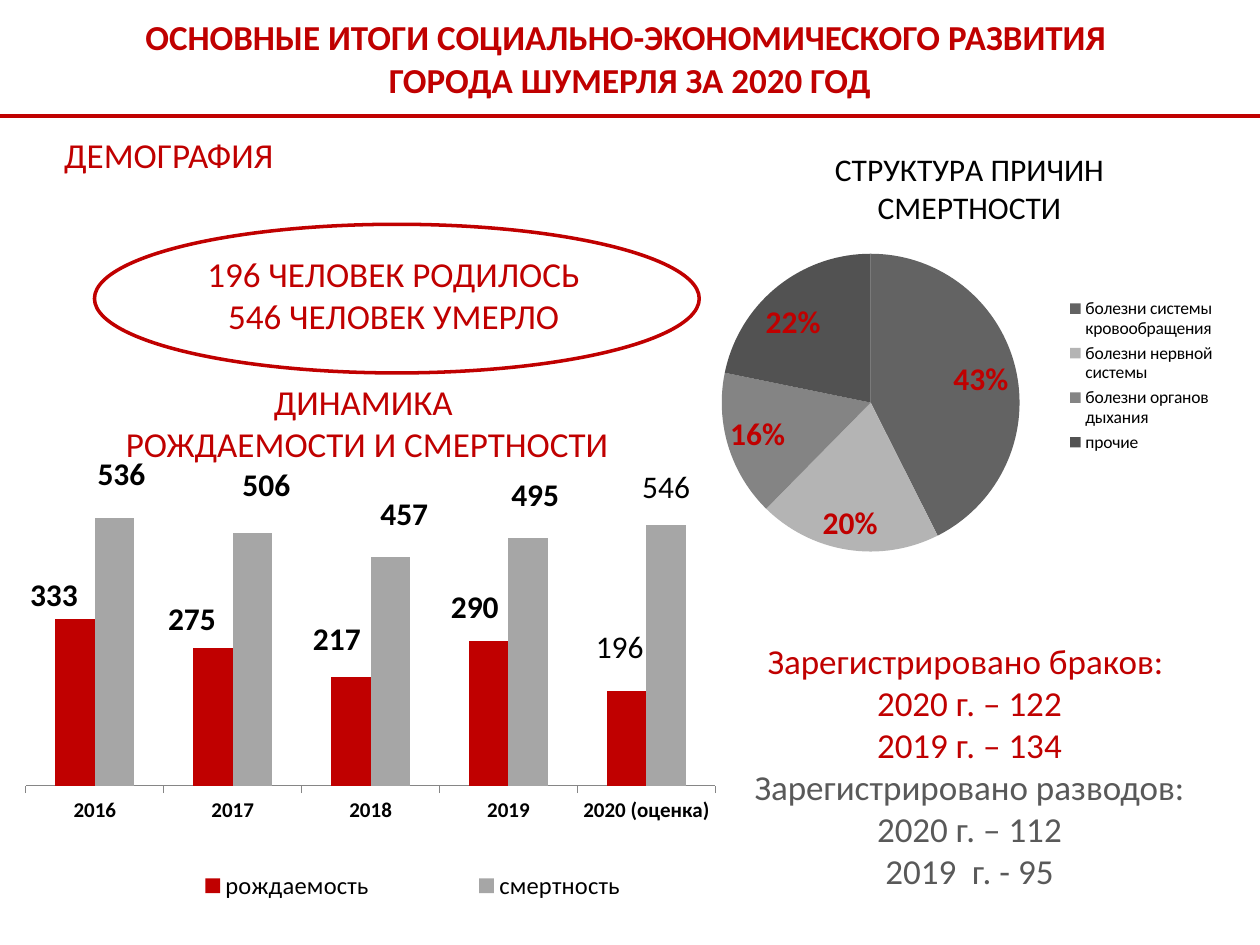
import pptx
import pptx.chart.data
import pptx.dml.color
import pptx.enum.chart
import pptx.enum.shapes
import pptx.enum.text
import pptx.oxml
import pptx.util
from pptx.util import Inches

RGBColor = pptx.dml.color.RGBColor
RED = RGBColor(0xC0, 0x00, 0x00)
BLACK = RGBColor(0, 0, 0)
DARK_GRAY = RGBColor(0x59, 0x59, 0x59)
AXIS_GRAY = RGBColor(0x86, 0x86, 0x86)
BAR_GRAY = RGBColor(0xA6, 0xA6, 0xA6)
PIE_GRAYS = [RGBColor(shade, shade, shade) for shade in (0x63, 0xB4, 0x84, 0x52)]
CHART_XMLNS = 'xmlns:c="http://schemas.openxmlformats.org/drawingml/2006/chart"'

YEARS = ["2016", "2017", "2018", "2019", "2020 (оценка)"]
# name, colour, values, text of the last label, label shifts as chart fractions
BAR_SERIES = [
    ("рождаемость", RED, (333, 275, 217, 290, 190), "196",
     [(-0.03, 0), (-0.03, -0.01), (-0.02, -0.03), (-0.02, -0.02), (-0.01, -0.04)]),
    ("смертность", BAR_GRAY, (536, 506, 457, 495, 521), "546",
     [(0.01, -0.04), (0.02, -0.05), (0.02, -0.04), (0.01, -0.04), (0, -0.03)]),
]
# cause, percentage, colour, label shift
DEATH_CAUSES = [
    ("болезни системы кровообращения", 43, PIE_GRAYS[0], (0, -0.02)),
    ("болезни нервной системы", 20, PIE_GRAYS[1], (-0.05, 0)),
    ("болезни органов дыхания", 16, PIE_GRAYS[2], (-0.01, 0.02)),
    ("прочие", 22, PIE_GRAYS[3], (-0.03, 0.02)),
]


def style_font(font, size, color=BLACK, bold=False):
    font.name = "Calibri"
    font.size = pptx.util.Pt(size)
    font.bold = bold
    font.color.rgb = color


def add_text(page, left, top, width, height, lines, bold=False):
    """Add centred 20 pt lines, each given as (text, colour)."""
    box = page.shapes.add_textbox(Inches(left), Inches(top), Inches(width), Inches(height))
    frame = box.text_frame
    frame.word_wrap = True
    frame.vertical_anchor = pptx.enum.text.MSO_ANCHOR.MIDDLE
    for index, (text, color) in enumerate(lines):
        para = frame.paragraphs[0] if index == 0 else frame.add_paragraph()
        para.text = text
        para.alignment = pptx.enum.text.PP_ALIGN.CENTER
        style_font(para.font, 20, color, bold)


def add_rule(page):
    line = page.shapes.add_connector(
        pptx.enum.shapes.MSO_CONNECTOR.STRAIGHT, 0, Inches(0.92), Inches(10), Inches(0.92))
    line.line.color.rgb = RED
    line.line.width = pptx.util.Pt(2.5)
    line._element.spPr.append(pptx.oxml.parse_xml(
        '<a:effectLst xmlns:a="http://schemas.openxmlformats.org/drawingml/2006/main"/>'))


def add_ellipse(page):
    ellipse = page.shapes.add_shape(
        pptx.enum.shapes.MSO_SHAPE.OVAL, Inches(0.75), Inches(1.78), Inches(4.8), Inches(1.18))
    ellipse.shadow.inherit = False
    ellipse.fill.background()
    ellipse.line.color.rgb = RED
    ellipse.line.width = pptx.util.Pt(2)


def make_layout(x, y, size=None, inner=False):
    """Build a manual chart layout; without a size it is a label shift."""
    values = [("layoutTarget", "inner")] if inner else []
    if size:
        values += [("xMode", "edge"), ("yMode", "edge")]
    values += [("x", x), ("y", y)]
    if size:
        values += [("w", size[0]), ("h", size[1])]
    body = "".join(f'<c:{tag} val="{value}"/>' for tag, value in values)
    return pptx.oxml.parse_xml(
        f"<c:layout {CHART_XMLNS}><c:manualLayout>{body}</c:manualLayout></c:layout>")


def drop_layout(element):
    for old in element.xpath("c:layout"):
        element.remove(old)


def place_plot(chart, x, y, width, height):
    area = chart._chartSpace.chart.plotArea
    drop_layout(area)
    area.insert(0, make_layout(x, y, (width, height), inner=True))


def add_legend(chart, size, x, y, width, height):
    chart.has_legend = True
    legend = chart.legend
    legend.position = pptx.enum.chart.XL_LEGEND_POSITION.RIGHT
    legend.include_in_layout = False
    style_font(legend.font, size)
    drop_layout(legend._element)
    legend._element.xpath("c:legendPos")[0].addnext(make_layout(x, y, (width, height)))


def add_chart(page, kind, left, top, width, height, categories, series):
    data = pptx.chart.data.CategoryChartData()
    data.categories = categories
    for name, values in series:
        data.add_series(name, values)
    frame = page.shapes.add_chart(
        kind, Inches(left), Inches(top), Inches(width), Inches(height), data)
    style_font(frame.chart.font, 10)
    return frame.chart


def shift_label(labels, index, shift):
    """Move one point label and return its element."""
    element = labels._element.xpath(f"c:dLbl[c:idx/@val='{index}']")[0]
    drop_layout(element)
    element.xpath("c:idx")[0].addnext(make_layout(*shift))
    return element


def hide_leader_lines(labels):
    for flag in labels._element.xpath("c:showLeaderLines"):
        flag.set("val", "0")
    labels._element.append(pptx.oxml.parse_xml(
        f'<c:extLst {CHART_XMLNS}><c:ext uri="{{CE6537A1-D6FC-4f65-9D91-7224C49458BB}}" '
        'xmlns:c15="http://schemas.microsoft.com/office/drawing/2012/chart">'
        '<c15:showLeaderLines val="0"/></c:ext></c:extLst>'))


def label_bars(series, last_text, shifts):
    labels = series.data_labels
    labels.show_value = True
    style_font(labels.font, 18, bold=True)
    last = len(shifts) - 1
    for index, shift in enumerate(shifts):
        label = series.points[index].data_label
        if index == last:
            span = label.text_frame.paragraphs[0].add_run()
            span.text = last_text
            style_font(span.font, 18)
        else:
            style_font(label.font, 18, bold=True)
        label.position = pptx.enum.chart.XL_LABEL_POSITION.OUTSIDE_END
        shift_label(labels, index, shift)
    hide_leader_lines(labels)


def add_birth_death_chart(page):
    chart = add_chart(
        page, pptx.enum.chart.XL_CHART_TYPE.COLUMN_CLUSTERED, 0.2, 3.44, 5.59, 3.78,
        YEARS, [(name, values) for name, _, values, _, _ in BAR_SERIES])
    chart.has_title = False
    place_plot(chart, 0, 0.11, 0.98, 0.63)
    add_legend(chart, 14, 0.11, 0.91, 0.88, 0.08)
    plot = chart.plots[0]
    plot.gap_width = 150
    plot.overlap = 0
    plot.vary_by_categories = False
    value_axis = chart.value_axis
    value_axis.minimum_scale = 0
    value_axis.maximum_scale = 600
    value_axis.has_major_gridlines = False
    value_axis.visible = False
    year_axis = chart.category_axis
    year_axis.major_tick_mark = pptx.enum.chart.XL_TICK_MARK.OUTSIDE
    year_axis.format.line.color.rgb = AXIS_GRAY
    style_font(year_axis.tick_labels.font, 12, bold=True)
    for series, (_, color, _, last_text, shifts) in zip(plot.series, BAR_SERIES):
        series.format.fill.solid()
        series.format.fill.fore_color.rgb = color
        label_bars(series, last_text, shifts)


def add_death_cause_chart(page):
    chart = add_chart(
        page, pptx.enum.chart.XL_CHART_TYPE.PIE, 5.63, 0.99, 4.13, 3.94,
        [cause[0] for cause in DEATH_CAUSES], [("Причины", [cause[1] for cause in DEATH_CAUSES])])
    chart.has_title = True
    title = chart.chart_title.text_frame
    title.text = "СТРУКТУРА ПРИЧИН СМЕРТНОСТИ"
    style_font(title.paragraphs[0].font, 18)
    place_plot(chart, 0.02, 0.26, 0.58, 0.6)
    add_legend(chart, 10, 0.68, 0.34, 0.3, 0.33)
    plot = chart.plots[0]
    plot.vary_by_categories = True
    series = plot.series[0]
    labels = series.data_labels
    labels.show_value = False
    labels.show_percentage = True
    labels.number_format = "0%"
    labels.number_format_is_linked = False
    inside_end = pptx.enum.chart.XL_LABEL_POSITION.INSIDE_END
    labels.position = inside_end
    style_font(labels.font, 18, RED, bold=True)
    for index, (_, _, color, shift) in enumerate(DEATH_CAUSES):
        point = series.points[index]
        point.format.fill.solid()
        point.format.fill.fore_color.rgb = color
        style_font(point.data_label.font, 18, RED, bold=True)
        point.data_label.position = inside_end
        element = shift_label(labels, index, shift)
        element.xpath("c:layout")[0].addnext(pptx.oxml.parse_xml(
            f'<c:numFmt {CHART_XMLNS} formatCode="0%" sourceLinked="0"/>'))
        element.xpath("c:showVal")[0].set("val", "0")
        element.xpath("c:showPercent")[0].set("val", "1")
    hide_leader_lines(labels)


def main():
    deck = pptx.Presentation()
    deck.slide_width, deck.slide_height = Inches(10), Inches(7.5)
    page = deck.slides.add_slide(deck.slide_layouts[6])
    add_text(page, 0, 0, 10, 0.92, [
        ("ОСНОВНЫЕ ИТОГИ СОЦИАЛЬНО-ЭКОНОМИЧЕСКОГО РАЗВИТИЯ ", RED),
        ("ГОРОДА ШУМЕРЛЯ ЗА 2020 ГОД", RED)], bold=True)
    add_text(page, 0.83, 2.96, 4.17, 0.79, [
        ("ДИНАМИКА ", RED), ("РОЖДАЕМОСТИ И СМЕРТНОСТИ", RED)])
    add_birth_death_chart(page)
    add_rule(page)
    add_text(page, 0.98, 1.94, 4.29, 0.79, [
        ("196 ЧЕЛОВЕК РОДИЛОСЬ", RED), ("546 ЧЕЛОВЕК УМЕРЛО", RED)])
    add_ellipse(page)
    add_text(page, 5.55, 5.09, 4.29, 1.97, [
        ("Зарегистрировано браков: ", RED), ("2020 г. – 122", RED), ("2019 г. – 134", RED),
        ("Зарегистрировано разводов:", DARK_GRAY), ("2020 г. – 112", DARK_GRAY),
        ("2019  г. - 95", DARK_GRAY)])
    add_text(page, 0.12, 0.99, 2.44, 0.47, [("ДЕМОГРАФИЯ", RED)])
    add_death_cause_chart(page)
    deck.save("out.pptx")


if __name__ == "__main__":
    main()
